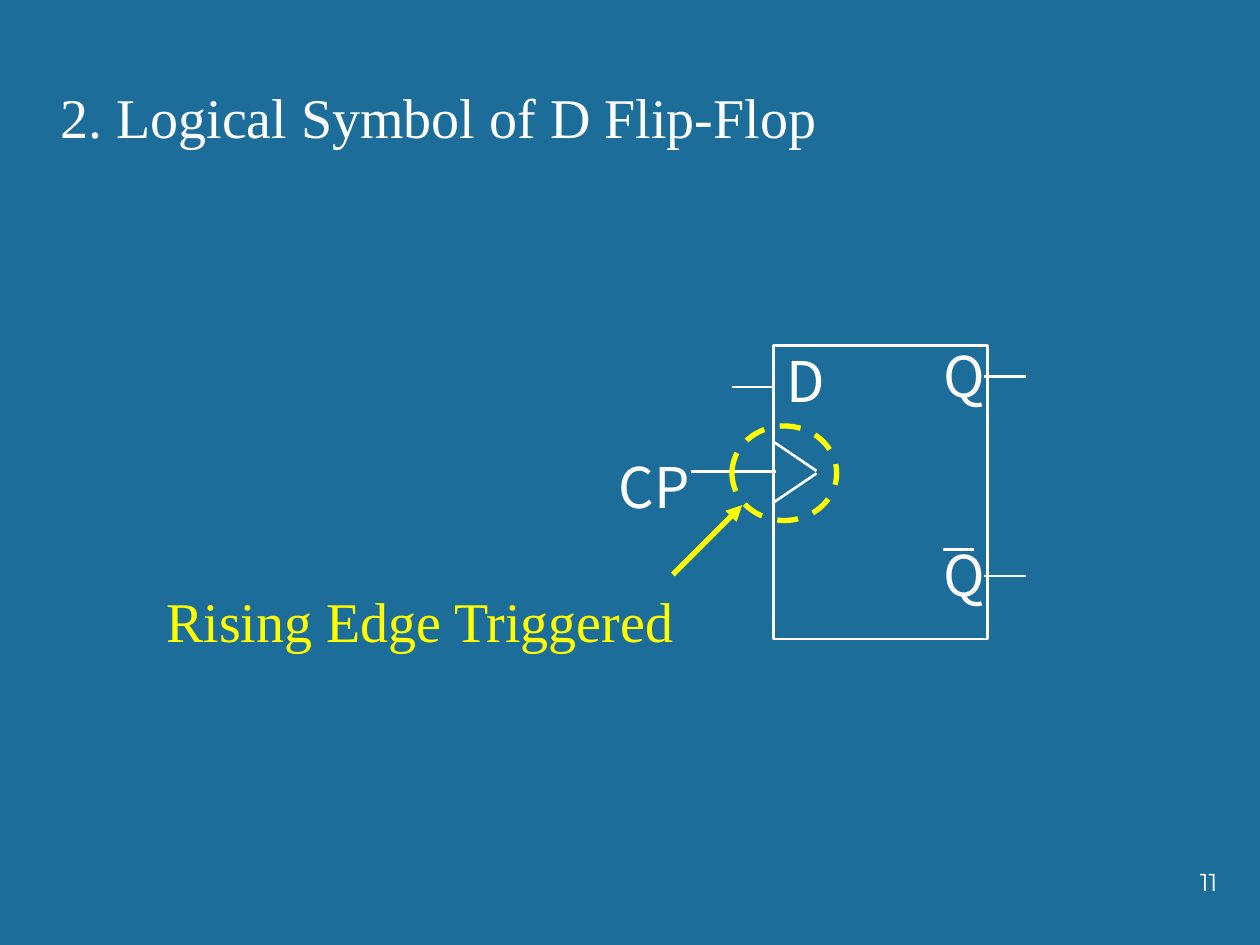
from dataclasses import dataclass

from lxml import etree
from pptx import Presentation
from pptx.dml.color import RGBColor
from pptx.enum.dml import MSO_LINE
from pptx.enum.shapes import MSO_CONNECTOR, MSO_SHAPE
from pptx.enum.text import MSO_ANCHOR, MSO_AUTO_SIZE, PP_ALIGN
from pptx.oxml.ns import qn
from pptx.util import Pt

STRAIGHT = MSO_CONNECTOR.STRAIGHT
RECT, OVAL = MSO_SHAPE.RECTANGLE, MSO_SHAPE.OVAL
TOP, MIDDLE, BOTTOM = MSO_ANCHOR.TOP, MSO_ANCHOR.MIDDLE, MSO_ANCHOR.BOTTOM
LEFT, RIGHT = PP_ALIGN.LEFT, PP_ALIGN.RIGHT
DASH = MSO_LINE.DASH
FIT = MSO_AUTO_SIZE.SHAPE_TO_FIT_TEXT
NO_FIT = MSO_AUTO_SIZE.NONE


@dataclass(frozen=True)
class Theme:
    back: RGBColor = RGBColor(0x1C, 0x6D, 0x9A)
    ink: RGBColor = RGBColor(0xFF, 0xFF, 0xFF)
    accent: RGBColor = RGBColor(0xFF, 0xFF, 0x00)
    serif: str = "Times New Roman"
    symbol: str = "Noto Sans CJK SC"
    number: str = "Montserrat"
    body_size: int = 32
    number_size: int = 14
    thin: float = 1.5
    thick: float = 3


THEME = Theme()


def add_text(shapes, box, text, font, color=THEME.ink, size=THEME.body_size,
             align=LEFT, anchor=TOP, wrap=True, auto_size=NO_FIT):
    s = shapes.add_textbox(*map(Pt, box))
    tf = s.text_frame
    frame_format = {"word_wrap": wrap, "vertical_anchor": anchor,
                    "auto_size": auto_size}
    for name, value in frame_format.items():
        setattr(tf, name, value)
    p = tf.paragraphs[0]
    p.alignment = align
    r = p.add_run()
    r.text = text
    for name, value in {"name": font, "size": Pt(size)}.items():
        setattr(r.font, name, value)
    r.font.color.rgb = color


def add_outline(shapes, kind, box, color, width, dash=None):
    s = shapes.add_shape(kind, *map(Pt, box))
    s.shadow.inherit = False
    s.fill.background()
    s.line.color.rgb = color
    s.line.width = Pt(width)
    if dash:
        s.line.dash_style = dash


def add_line(shapes, start, end, color=THEME.ink, width=THEME.thin, arrow=False):
    c = shapes.add_connector(STRAIGHT, *map(Pt, (*start, *end)))
    c.line.color.rgb = color
    c.line.width = Pt(width)
    props = c._element.spPr
    if arrow:
        etree.SubElement(props.find(qn("a:ln")), qn("a:tailEnd"), type="triangle")
    etree.SubElement(props, qn("a:effectLst"))


def add_flip_flop(shapes, box):
    """Draw the D flip-flop symbol, with its pins reaching outside the box."""
    x, y, w, h = box
    group = shapes.add_group_shape().shapes
    add_outline(group, RECT, box, THEME.ink, THEME.thin)

    clock_y, tip, half = 72.5, 24.5, 17.3
    lines = [
        ((0, clock_y - half), (tip, clock_y - 0.7)),
        ((0, clock_y + half), (tip, clock_y + 0.7)),
        ((w - 2.2, 131.8), (w + 22, 131.8)),
        ((1.4, 72), (-47.5, 72)),
        ((w - 2.2, 18), (w + 22, 18)),
        ((96.5, 116.6), (114.5, 116.6)),
        ((0, 23.8), (-23.8, 23.8)),
    ]
    for (x1, y1), (x2, y2) in lines:
        add_line(group, (x + x1, y + y1), (x + x2, y + y2))

    labels = [("D", 0, -2.9, 30.2), ("Q", 90, -5.8, 30.2),
              ("Q", 90, 108, 30.2), ("CP", -95.8, 57.6, 73.4)]
    for text, dx, dy, width in labels:
        add_text(group, (x + dx, y + dy, width, 45.4), text, THEME.symbol,
                 anchor=MIDDLE, wrap=text == "CP")


def add_trigger_note(shapes, box):
    """Ring the clock input and point to it from the note in the box."""
    x, y, w, h = box
    add_outline(shapes, OVAL, (x + 330.4, y - 88.5, 59.8, 54),
                THEME.accent, THEME.thick, DASH)
    add_line(shapes, (x + 296.6, y - 3.6), (x + 336.2, y - 43.2),
             THEME.accent, THEME.thick, arrow=True)
    add_text(shapes, box, "Rising Edge Triggered", THEME.serif, THEME.accent,
             auto_size=FIT)


def add_title(shapes, box):
    add_text(shapes, box, "2. Logical Symbol of D Flip-Flop", THEME.serif,
             anchor=BOTTOM, auto_size=FIT)


def add_page_number(shapes, box):
    add_text(shapes, box, "11", THEME.number, size=THEME.number_size, align=RIGHT)


def main():
    prs = Presentation()
    prs.slide_width, prs.slide_height = Pt(720), Pt(540)
    slide = prs.slides.add_slide(prs.slide_layouts[6])
    fill = slide.background.fill
    fill.solid()
    fill.fore_color.rgb = THEME.back

    shapes = slide.shapes
    add_flip_flop(shapes, (442.1, 197.3, 122.4, 167.8))
    add_trigger_note(shapes, (87.9, 331.9, 334.8, 46.1))
    add_page_number(shapes, (553, 491.8, 149.8, 36))
    add_title(shapes, (27.4, 43.2, 689.8, 46.1))
    prs.save("out.pptx")


if __name__ == "__main__":
    main()
